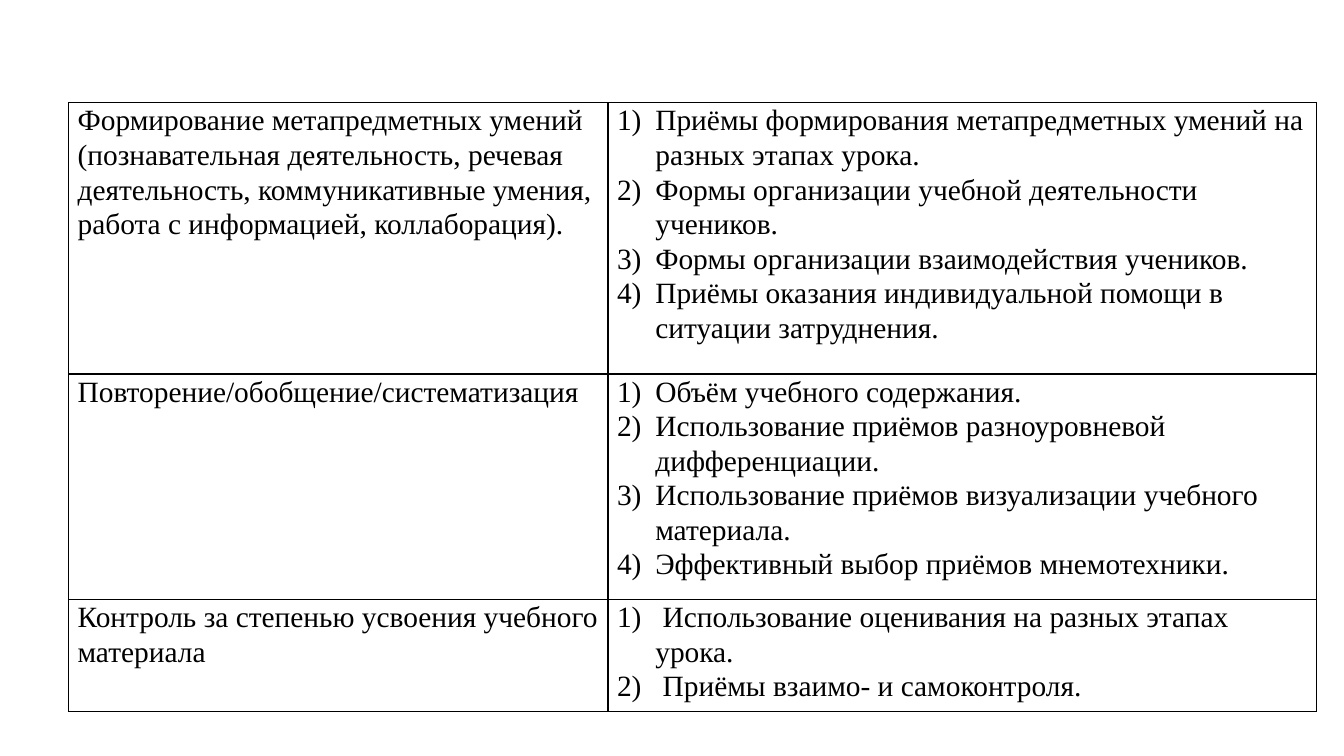
from lxml import etree
from pptx import Presentation, util as u
from pptx.dml.color import RGBColor
from pptx.oxml import ns

WIDE, HIGH = 13.33, 7.5
COLS = (5.35, 7.03)
ROWS = (2.69, 2.24, 1.11)
INK = "000000"
TOPICS = (
    ("Формирование метапредметных умений (познавательная деятельность, речевая "
     "деятельность, коммуникативные умения, работа с информацией, коллаборация).",
     ("Приёмы формирования метапредметных умений на разных этапах урока.",
      "Формы организации учебной деятельности учеников.",
      "Формы организации взаимодействия учеников.",
      "Приёмы оказания индивидуальной помощи в ситуации затруднения.")),
    ("Повторение/обобщение/систематизация",
     ("Объём учебного содержания.",
      "Использование приёмов разноуровневой дифференциации.",
      "Использование приёмов визуализации учебного материала.",
      "Эффективный выбор приёмов мнемотехники.")),
    ("Контроль за степенью усвоения учебного материала",
     (" Использование оценивания на разных этапах урока.",
      " Приёмы взаимо- и самоконтроля.")),
)


def color(code):
    """Turn a hex string into a colour."""
    return RGBColor.from_string(code)


def node(parent, tag, **attrs):
    """Add an XML element with the given attributes."""
    return etree.SubElement(parent, ns.qn(tag), attrs)


def number(para, indent=0.38):
    """Give a paragraph a hanging number."""
    props = para._p.get_or_add_pPr()
    props.set("marL", str(u.Inches(indent)))
    props.set("indent", str(-u.Inches(indent)))
    node(props, "a:buFont", typeface="+mj-lt")
    node(props, "a:buAutoNum", type="arabicParenR")


def write(frame, lines, size=21, face="Times New Roman", ink=INK,
          listed=False, after=8):
    """Fill a text frame with formatted paragraphs."""
    for at, line in enumerate(lines):
        para = frame.add_paragraph() if at else frame.paragraphs[0]
        if listed:
            number(para)
        para.line_spacing = 1.06
        para.space_before = u.Pt(0)
        para.space_after = u.Pt(after if at == len(lines) - 1 else 0)
        run = para.add_run()
        run.text = line
        run.font.size = u.Pt(size)
        run.font.name = face
        run.font.color.rgb = color(ink)


def border(cell, ink=INK, width=1):
    """Draw all four sides of a cell."""
    props = cell._tc.get_or_add_tcPr()
    for side in "LRTB":
        line = node(props, f"a:ln{side}", w=str(u.Pt(width)))
        node(node(line, "a:solidFill"), "a:srgbClr", val=ink)


def style(cell):
    """Set the margins, sides and fill of a cell."""
    cell.margin_left = cell.margin_right = u.Inches(0.09)
    cell.margin_top = cell.margin_bottom = 0
    border(cell)
    cell.fill.background()


def grid(slide, left, top):
    """Add the table of topics and their methods."""
    table = slide.shapes.add_table(
        len(ROWS), len(COLS), u.Inches(left), u.Inches(top),
        u.Inches(sum(COLS)), u.Inches(sum(ROWS))).table
    table.first_row = table.horz_banding = False
    for col, width in zip(table.columns, COLS):
        col.width = u.Inches(width)
    for row, height, (topic, steps) in zip(table.rows, ROWS, TOPICS):
        row.height = u.Inches(height)
        name, plan = row.cells
        for cell in (name, plan):
            style(cell)
        write(name.text_frame, [topic])
        write(plan.text_frame, steps, listed=True)


def main():
    """Build and save the slide."""
    deck = Presentation()
    deck.slide_width, deck.slide_height = u.Inches(WIDE), u.Inches(HIGH)
    slide = deck.slides.add_slide(deck.slide_layouts[6])
    grid(slide, 0.68, 1.02)
    deck.save("out.pptx")


if __name__ == "__main__":
    main()
